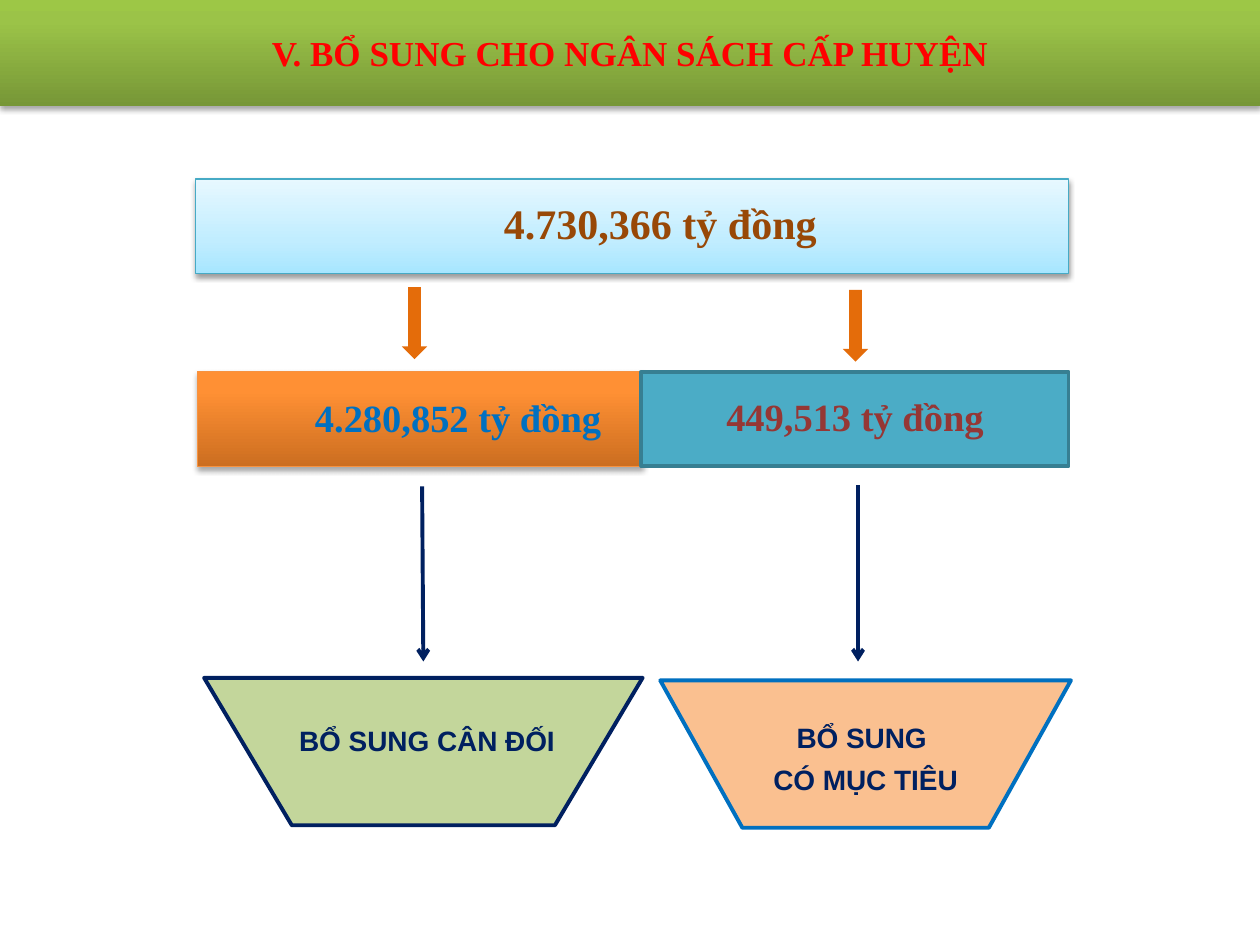
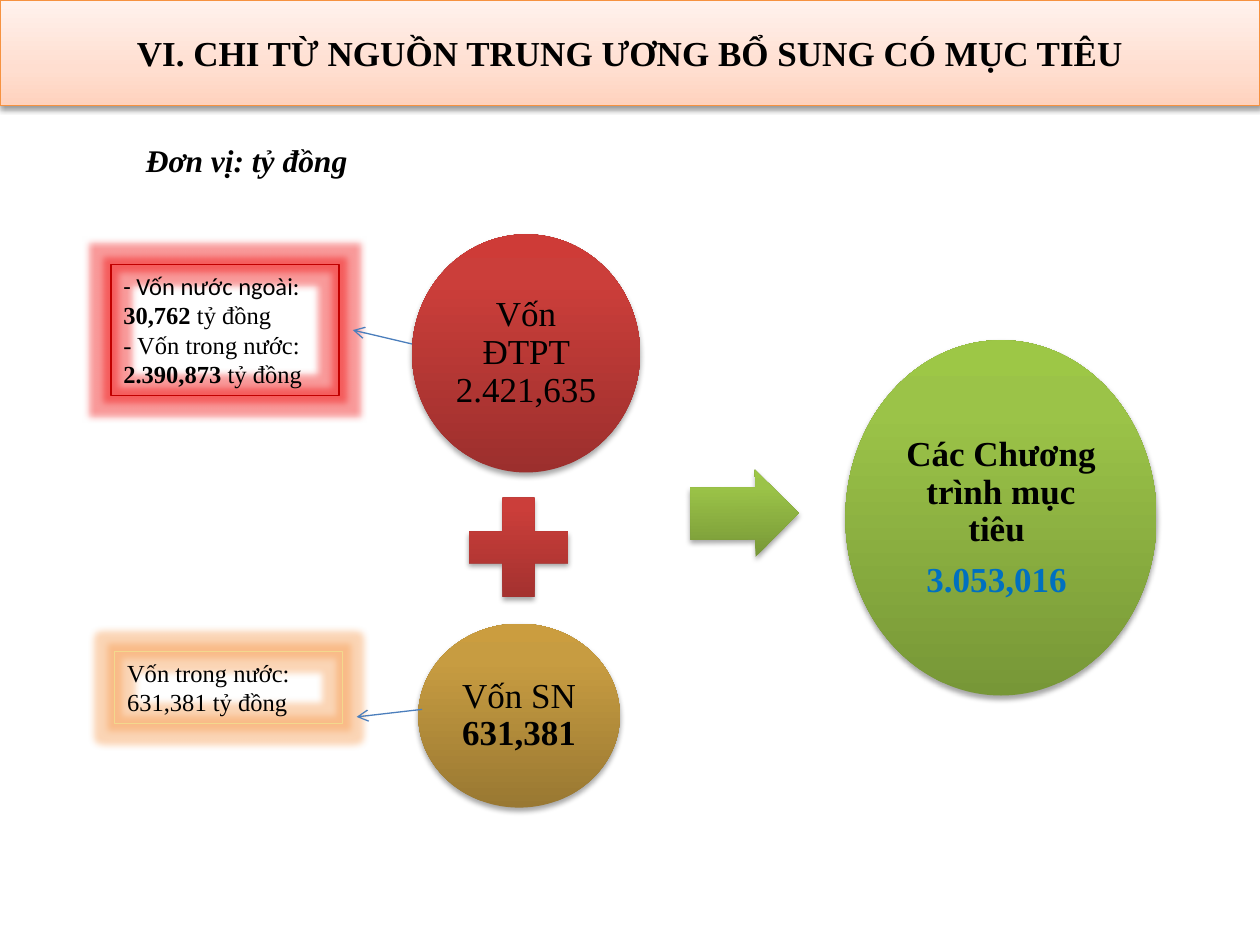
from copy import deepcopy
from dataclasses import dataclass

from lxml.etree import SubElement
from pptx import Presentation
from pptx.dml.color import RGBColor
from pptx.enum.shapes import MSO_CONNECTOR, MSO_SHAPE
from pptx.enum.text import MSO_ANCHOR as ANCHOR, MSO_AUTO_SIZE as AUTO_SIZE, PP_ALIGN as ALIGN
from pptx.oxml.ns import qn
from pptx.util import Inches, Pt


@dataclass(frozen=True)
class Theme:
    serif: str = "Times New Roman"
    sans: str = "Arial"
    body: str = "Calibri"
    title_size: int = 20
    total_size: int = 24
    part_size: int = 22
    unit_size: int = 18
    label_size: int = 16
    note_size: int = 14
    black: str = "000000"
    red: str = "FF0000"
    navy: str = "002060"
    blue: str = "0070C0"
    brown: str = "984807"
    maroon: str = "953735"
    orange: str = "F69240"
    arrow_orange: str = "E46C0A"
    teal: str = "4BACC6"
    teal_edge: str = "377F92"
    sky_edge: str = "46AAC5"
    sage: str = "C3D69B"
    peach: str = "FAC090"
    dark_red: str = "C00000"
    sand: str = "F3D88D"
    pointer: str = "4B7EBC"
    red_glow: str = "F00000"
    orange_glow: str = "F79646"
    # Gradients run from bottom to top: (position in percent, colour)
    green_fade: tuple = ((0, "779737"), (80, "9BC348"), (100, "9DC746"))
    orange_fade: tuple = ((0, "CC6E20"), (80, "FF9034"), (100, "FF9136"))
    red_fade: tuple = ((0, "9C2F2D"), (80, "CB3E3A"), (100, "CE3B37"))
    gold_fade: tuple = ((0, "997832"), (80, "C79C41"), (100, "CB9D3F"))
    sky_fade: tuple = ((0, "A7E6FF"), (35, "C1EDFF"), (100, "E7F8FF"))
    blush_fade: tuple = ((0, "FFD2BD"), (35, "FFDED0"), (100, "FFF2ED"))
    # Shadows: (opacity in percent, distance in points)
    strong_shadow: tuple = (35, 1.8)
    soft_shadow: tuple = (38, 1.6)


THEME = Theme()


def style(shape, fill=None, line=None, width=0.75, shadow=None, glow=None):
    """Set fill (colour or gradient stops), outline and effect of a shape."""
    if fill is None:
        shape.fill.background()
    elif isinstance(fill, str):
        shape.fill.solid()
        shape.fill.fore_color.rgb = RGBColor.from_string(fill)
    else:
        shape.fill.gradient()
        shape.fill.gradient_angle = 90
        stop_list = shape._element.spPr.find(".//" + qn("a:gsLst"))
        stop_list.append(deepcopy(stop_list[-1]))
        for stop, (position, color) in zip(shape.fill.gradient_stops, fill):
            stop.position = position / 100
            stop.color.rgb = RGBColor.from_string(color)
    if line:
        shape.line.color.rgb = RGBColor.from_string(line)
        shape.line.width = Pt(width)
    else:
        shape.line.fill.background()

    shape.shadow.inherit = False
    effects = shape._element.spPr.find(qn("a:effectLst"))
    if shadow:
        opacity, distance = shadow
        effect = SubElement(effects, qn("a:outerShdw"), blurRad=str(Pt(3.1)),
                            dist=str(Pt(distance)), dir="5400000", rotWithShape="0")
        color = THEME.black
    elif glow:
        opacity, color = 40, glow
        effect = SubElement(effects, qn("a:glow"), rad=str(Inches(0.11)))
    else:
        return
    tint = SubElement(effect, qn("a:srgbClr"), val=color)
    SubElement(tint, qn("a:alpha"), val=str(opacity * 1000))


def write(shape, paragraphs, size=THEME.title_size, color=THEME.black, font=THEME.serif,
          bold=False, italic=False, align=ALIGN.CENTER, anchor=ANCHOR.TOP, inset=None,
          line_spacing=None, space_after=None, fit=AUTO_SIZE.NONE):
    """Fill a shape with paragraphs of spans: (text, overrides of the format)."""
    frame = shape.text_frame
    frame.word_wrap = True
    frame.auto_size = fit
    frame.vertical_anchor = anchor
    if inset is not None:
        frame.margin_left = frame.margin_right = Inches(inset)
        frame.margin_top = frame.margin_bottom = Inches(inset)
    for index, spans in enumerate(paragraphs):
        para = frame.add_paragraph() if index else frame.paragraphs[0]
        para.alignment = align
        para.line_spacing = line_spacing
        para.space_after = space_after
        for text, changes in spans:
            look = dict(size=size, color=color, font=font, bold=bold, italic=italic) | changes
            span = para.add_run()
            span.text = text
            span.font.name = look["font"]
            span.font.size = Pt(look["size"])
            span.font.bold = look["bold"]
            span.font.italic = look["italic"]
            span.font.color.rgb = RGBColor.from_string(look["color"])


deck = Presentation()
deck.slide_width, deck.slide_height = Inches(10), Inches(7.5)

# Title bands
pages = []
for heading, color, look in (
    ("V. BỔ SUNG CHO NGÂN SÁCH CẤP HUYỆN", THEME.red,
     dict(fill=THEME.green_fade, shadow=THEME.strong_shadow)),
    ("VI. CHI TỪ NGUỒN TRUNG ƯƠNG BỔ SUNG CÓ MỤC TIÊU", THEME.black,
     dict(fill=THEME.blush_fade, line=THEME.orange, shadow=THEME.soft_shadow)),
):
    page = deck.slides.add_slide(deck.slide_layouts[5])
    title = page.shapes.title
    title.left, title.top, title.width, title.height = 0, 0, deck.slide_width, Inches(0.84)
    style(title, **look)
    write(title, [[(heading, {})]], color=color, bold=True, anchor=ANCHOR.MIDDLE, inset=0)
    pages.append(page)
district_page, programme_page = pages

# Preset shapes of both slides: page, kind, place, look
for page, kind, place, look in (
    (district_page, MSO_SHAPE.RECTANGLE, (1.55, 1.42, 6.93, 0.75),
     dict(fill=THEME.sky_fade, line=THEME.sky_edge, shadow=THEME.soft_shadow)),
    (district_page, MSO_SHAPE.RECTANGLE, (1.57, 2.95, 3.53, 0.75),
     dict(fill=THEME.orange_fade, line=THEME.orange, shadow=THEME.strong_shadow)),
    (district_page, MSO_SHAPE.RECTANGLE, (5.09, 2.95, 3.39, 0.75),
     dict(fill=THEME.teal, line=THEME.teal_edge, width=2.25)),
    (district_page, MSO_SHAPE.FLOWCHART_MANUAL_OPERATION, (1.62, 5.38, 3.48, 1.17),
     dict(fill=THEME.sage, line=THEME.navy, width=2.25)),
    (district_page, MSO_SHAPE.FLOWCHART_MANUAL_OPERATION, (5.24, 5.4, 3.26, 1.17),
     dict(fill=THEME.peach, line=THEME.blue, width=2.25)),
    (district_page, MSO_SHAPE.DOWN_ARROW, (3.19, 2.28, 0.2, 0.57), dict(fill=THEME.arrow_orange)),
    (district_page, MSO_SHAPE.DOWN_ARROW, (6.69, 2.3, 0.2, 0.57), dict(fill=THEME.arrow_orange)),
    (programme_page, MSO_SHAPE.MATH_PLUS, (3.58, 3.81, 1.07, 1.07),
     dict(fill=THEME.red_fade, shadow=THEME.strong_shadow)),
    (programme_page, MSO_SHAPE.RIGHT_ARROW, (5.48, 3.73, 0.86, 0.69),
     dict(fill=THEME.green_fade, shadow=THEME.strong_shadow)),
):
    shape = page.shapes.add_shape(kind, *map(Inches, place))
    style(shape, **look)
    if kind == MSO_SHAPE.RIGHT_ARROW:
        shape.adjustments[0] = 0.6
        shape.rotation = 359.6

# Amounts, labels and the unit
amount = dict(size=THEME.part_size, bold=True)
label = dict(size=THEME.label_size, color=THEME.navy, font=THEME.sans, bold=True,
             line_spacing=Pt(24))
for page, place, lines, look in (
    (district_page, (3.08, 1.52, 4.32, 0.5), ["4.730,366 tỷ đồng"],
     dict(size=THEME.total_size, color=THEME.brown, bold=True)),
    (district_page, (2.18, 3.08, 2.91, 0.47), ["4.280,852 tỷ đồng"],
     dict(color=THEME.blue, **amount)),
    (district_page, (5.09, 3.07, 3.39, 0.47), ["449,513 tỷ đồng"],
     dict(color=THEME.maroon, **amount)),
    (district_page, (2.21, 5.63, 2.36, 0.44), ["BỔ SUNG CÂN ĐỐI"], label),
    (district_page, (5.95, 5.6, 1.84, 0.77), ["BỔ SUNG ", "CÓ MỤC TIÊU"], label),
    (programme_page, (1.06, 1.07, 1.81, 0.4), ["Đơn vị: tỷ đồng"],
     dict(size=THEME.unit_size, bold=True, italic=True, align=ALIGN.LEFT)),
):
    box = page.shapes.add_textbox(*map(Inches, place))
    write(box, [[(line, {})] for line in lines], fit=AUTO_SIZE.SHAPE_TO_FIT_TEXT, **look)

# Capital circles and their total
strong = dict(bold=True)
for place, fade, paragraphs in (
    ((3.27, 1.86, 1.81, 1.89), THEME.red_fade, [[("Vốn ĐTPT 2.421,635", {})]]),
    ((3.32, 4.95, 1.6, 1.46), THEME.gold_fade, [[("Vốn SN ", {}), ("631,381", strong)]]),
    ((6.71, 2.7, 2.47, 2.82), THEME.green_fade,
     [[("Các Chương trình mục tiêu ", strong)],
      [("3.053,016 ", dict(bold=True, color=THEME.blue))]]),
):
    circle = programme_page.shapes.add_shape(MSO_SHAPE.OVAL, *map(Inches, place))
    style(circle, fill=fade, shadow=THEME.strong_shadow)
    write(circle, paragraphs, anchor=ANCHOR.MIDDLE, inset=0.03, line_spacing=0.9,
          space_after=Pt(7))

# Notes on the sources of capital
for place, edge, glow, paragraphs in (
    ((0.88, 2.1, 1.81, 1.04), THEME.dark_red, THEME.red_glow,
     [[("- Vốn nước ngoài: ", dict(font=THEME.body)), ("30,762 ", strong), ("tỷ đồng", {})],
      [("- Vốn trong nước: ", {}), ("2.390,873 ", strong), ("tỷ đồng", {})]]),
    ((0.91, 5.17, 1.81, 0.57), THEME.sand, THEME.orange_glow,
     [[("Vốn trong nước: 631,381 tỷ đồng", {})]]),
):
    note = programme_page.shapes.add_shape(MSO_SHAPE.RECTANGLE, *map(Inches, place))
    style(note, line=edge, glow=glow)
    write(note, paragraphs, size=THEME.note_size, align=ALIGN.LEFT,
          fit=AUTO_SIZE.SHAPE_TO_FIT_TEXT)

# Line arrows
for page, ends, color, width in (
    (district_page, (3.35, 3.86, 3.36, 5.25), THEME.navy, 2.25),
    (district_page, (6.81, 3.85, 6.81, 5.25), THEME.navy, 2.25),
    (programme_page, (3.27, 2.73, 2.8, 2.62), THEME.pointer, 0.75),
    (programme_page, (3.35, 5.63, 2.83, 5.69), THEME.pointer, 0.75),
):
    arrow = page.shapes.add_connector(MSO_CONNECTOR.STRAIGHT, *map(Inches, ends))
    arrow.line.color.rgb = RGBColor.from_string(color)
    arrow.line.width = Pt(width)
    SubElement(arrow.line._get_or_add_ln(), qn("a:tailEnd"), type="arrow")
    SubElement(arrow._element.spPr, qn("a:effectLst"))

deck.save("out.pptx")
